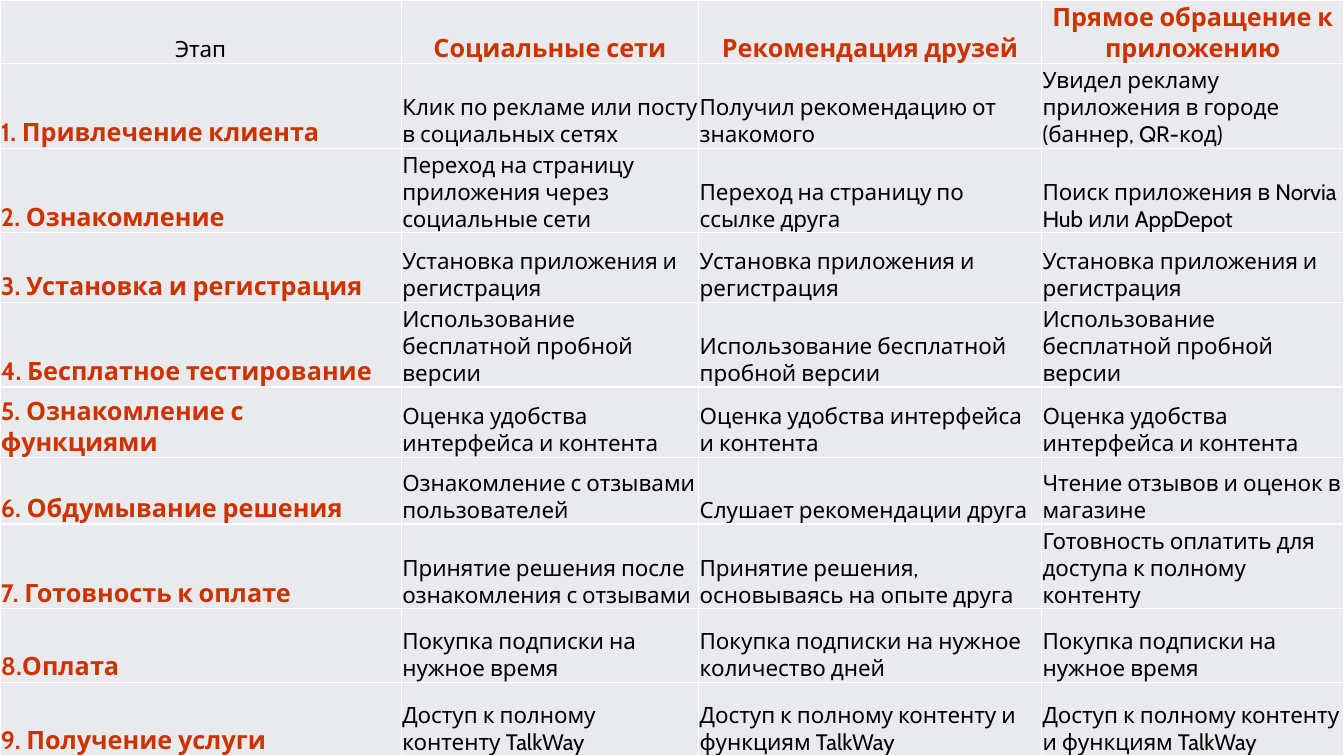
"""Build a slide with a table of customer journey stages by channel."""
from lxml.etree import SubElement
from pptx import Presentation
from pptx.dml.color import RGBColor
from pptx.enum.text import MSO_ANCHOR, PP_ALIGN
from pptx.oxml.ns import qn
from pptx.util import Inches, Pt

COLORS = {"cell": "E8EAED", "heading": "CC3300", "body": "000000", "border": "FFFFFF"}
COLUMN_WIDTHS = [3.98, 2.95, 3.4, 3]
ROW_HEIGHTS = [0.63, 0.84, 0.84, 0.69, 0.84, 0.7, 0.66, 0.84, 0.73, 0.73]
INSTALL = "Установка приложения и регистрация"
TRIAL = "Использование бесплатной пробной версии"
REVIEW = "Оценка удобства интерфейса и контента"
PURCHASE = "Покупка подписки на нужное время"
FULL_ACCESS = "Доступ к полному контенту и функциям TalkWay"
STAGES = [
    ["Этап", "Социальные сети", "Рекомендация друзей", "Прямое обращение к приложению"],
    ["1. Привлечение клиента", "Клик по рекламе или посту в социальных сетях",
     "Получил рекомендацию от знакомого", "Увидел рекламу приложения в городе (баннер, QR-код)"],
    ["2. Ознакомление", "Переход на страницу приложения через социальные сети",
     "Переход на страницу по ссылке друга", "Поиск приложения в Norvia Hub или AppDepot"],
    ["3. Установка и регистрация", INSTALL, INSTALL, INSTALL],
    ["4. Бесплатное тестирование", TRIAL, TRIAL, TRIAL],
    ["5. Ознакомление с функциями", REVIEW, REVIEW, REVIEW],
    ["6. Обдумывание решения", "Ознакомление с отзывами пользователей",
     "Слушает рекомендации друга", "Чтение отзывов и оценок в магазине"],
    ["7. Готовность к оплате", "Принятие решения после ознакомления с отзывами",
     "Принятие решения, основываясь на опыте друга",
     "Готовность оплатить для доступа к полному контенту"],
    ["8.Оплата", PURCHASE, "Покупка подписки на нужное количество дней", PURCHASE],
    ["9. Получение услуги", "Доступ к полному контенту TalkWay", FULL_ACCESS, FULL_ACCESS],
]


def add_borders(cell):
    properties = cell._tc.get_or_add_tcPr()
    for side in ("a:lnL", "a:lnR", "a:lnT", "a:lnB"):
        line = SubElement(properties, qn(side), w=str(Pt(1)))
        fill = SubElement(line, qn("a:solidFill"))
        SubElement(fill, qn("a:srgbClr"), val=COLORS["border"])


presentation = Presentation()
presentation.slide_width = Inches(13.33)
presentation.slide_height = Inches(7.5)
slide = presentation.slides.add_slide(presentation.slide_layouts[6])

table = slide.shapes.add_table(
    len(ROW_HEIGHTS), len(COLUMN_WIDTHS), 0, 0, Inches(13.33), Inches(7.5)
).table
for column, width in zip(table.columns, COLUMN_WIDTHS):
    column.width = Inches(width)
for row, height in zip(table.rows, ROW_HEIGHTS):
    row.height = Inches(height)

for row_index, texts in enumerate(STAGES):
    for column_index, text in enumerate(texts):
        is_heading = (row_index == 0) != (column_index == 0)
        cell = table.cell(row_index, column_index)
        add_borders(cell)
        cell.fill.solid()
        cell.fill.fore_color.rgb = RGBColor.from_string(COLORS["cell"])
        cell.vertical_anchor = MSO_ANCHOR.BOTTOM
        cell.margin_left = cell.margin_right = cell.margin_top = Inches(0.01)
        cell.margin_bottom = 0
        paragraph = cell.text_frame.paragraphs[0]
        paragraph.text = text
        paragraph.alignment = PP_ALIGN.CENTER if row_index == 0 else PP_ALIGN.LEFT
        font = paragraph.runs[0].font
        font.name = "Cabin"
        font.size = Pt(18 if is_heading else 16)
        font.bold = is_heading
        font.color.rgb = RGBColor.from_string(COLORS["heading" if is_heading else "body"])

presentation.save("out.pptx")
